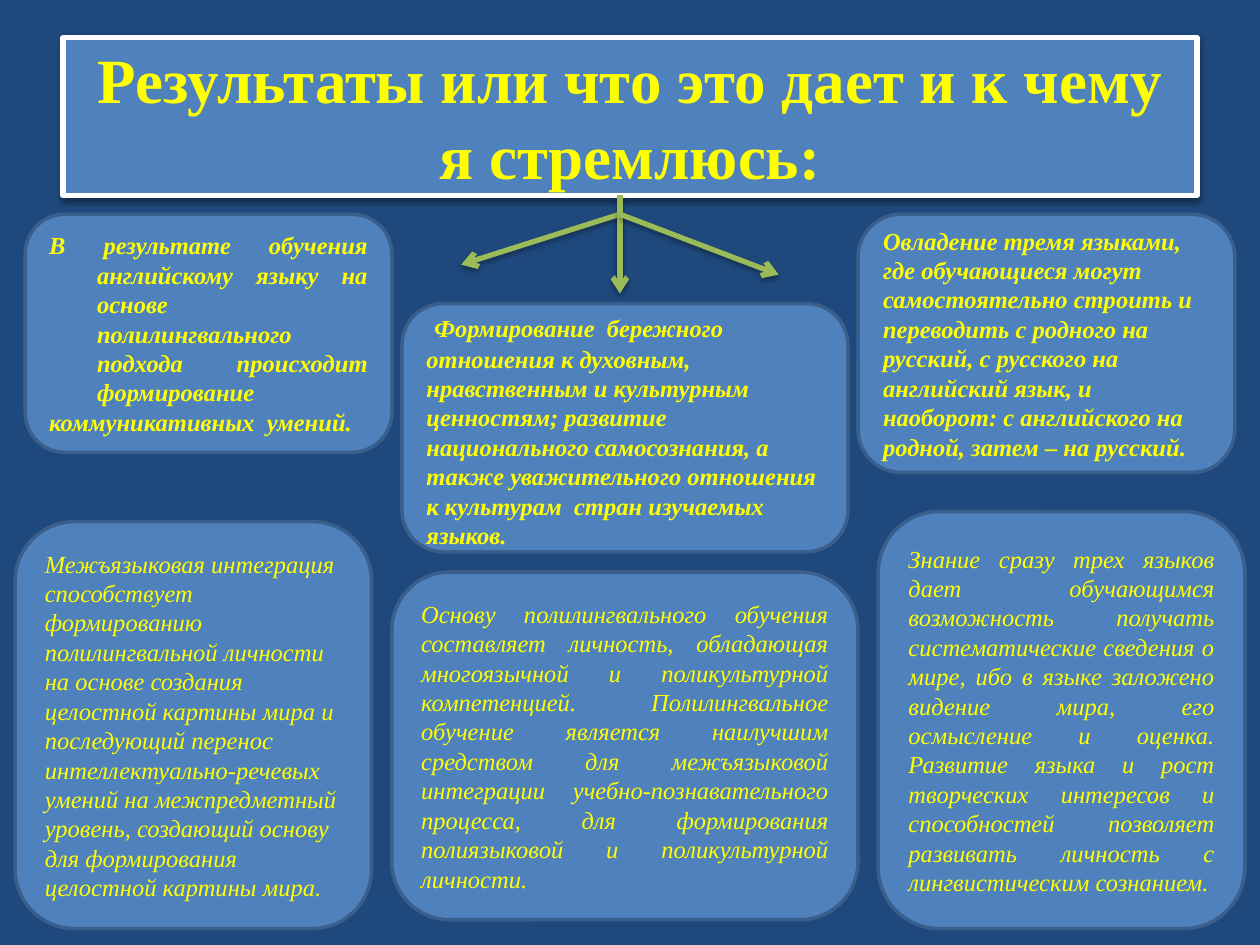
from lxml import etree
from pptx import Presentation
from pptx.dml.color import RGBColor
from pptx.enum.shapes import MSO_CONNECTOR, MSO_SHAPE
from pptx.enum.text import MSO_ANCHOR, PP_ALIGN
from pptx.oxml import parse_xml
from pptx.oxml.ns import nsdecls, qn
from pptx.util import Inches, Pt

NAVY = RGBColor(0x1F, 0x49, 0x7D)
BLUE = RGBColor(0x4F, 0x81, 0xBD)
BORDER = RGBColor(0x3A, 0x5F, 0x8C)
GREEN = RGBColor(0x9B, 0xBB, 0x59)
YELLOW = RGBColor(0xFF, 0xFF, 0x00)
WHITE = RGBColor(0xFF, 0xFF, 0xFF)

LEFT, JUSTIFY = PP_ALIGN.LEFT, PP_ALIGN.JUSTIFY

RESULTS = [
    ((0.2, 1.7, 2.91, 1.89), JUSTIFY, 0.38, [
        "В результате обучения английскому языку на основе полилингвального "
        "подхода происходит формирование",
        "коммуникативных  умений."]),
    ((3.19, 2.41, 3.54, 1.97), LEFT, 0, [
        "Формирование  бережного отношения к духовным, нравственным и "
        "культурным ценностям; развитие национального самосознания, а также "
        "уважительного отношения к культурам  стран изучаемых языков."]),
    ((6.81, 1.7, 2.99, 2.05), LEFT, 0, [
        "Овладение тремя языками, где обучающиеся могут самостоятельно "
        "строить и переводить с родного на русский, с русского на английский "
        "язык, и наоборот: с английского на родной, затем – на русский."]),
]
GOALS = [
    ((0.12, 4.14, 2.83, 3.23), LEFT, 0, [
        "Межъязыковая интеграция способствует формированию полилингвальной "
        "личности на основе создания целостной картины мира и последующий "
        "перенос интеллектуально-речевых умений на межпредметный уровень, "
        "создающий основу для формирования целостной картины мира."]),
    ((3.11, 4.54, 3.7, 2.76), JUSTIFY, 0, [
        "Основу полилингвального обучения составляет личность, обладающая "
        "многоязычной и поликультурной компетенцией. Полилингвальное обучение "
        "является наилучшим средством для межъязыковой интеграции "
        "учебно-познавательного процесса, для формирования полиязыковой и "
        "поликультурной личности."]),
    ((6.97, 4.06, 2.91, 3.31), JUSTIFY, 0, [
        "Знание сразу трех языков дает обучающимся возможность получать "
        "систематические сведения о мире, ибо в языке заложено видение мира, "
        "его осмысление и оценка. Развитие языка и рост творческих интересов и "
        "способностей позволяет развивать личность с лингвистическим "
        "сознанием."]),
]


def add_shadow(owner, opacity, distance):
    owner._element.spPr.append(parse_xml(
        f'<a:effectLst {nsdecls("a")}><a:outerShdw blurRad="{Pt(3.1)}" '
        f'dist="{Pt(distance)}" dir="5400000" rotWithShape="0">'
        f'<a:srgbClr val="000000"><a:alpha val="{opacity * 1000}"/></a:srgbClr>'
        f'</a:outerShdw></a:effectLst>'))


def add_panel(slide, box, kind, border, border_width):
    panel = slide.shapes.add_shape(kind, *map(Inches, box))
    panel.fill.solid()
    panel.fill.fore_color.rgb = BLUE
    panel.line.color.rgb = border
    panel.line.width = Pt(border_width)
    panel.text_frame.word_wrap = True
    panel.text_frame.vertical_anchor = MSO_ANCHOR.MIDDLE
    return panel


def style_paragraph(paragraph, size, alignment, bold, italic):
    paragraph.alignment = alignment
    font = paragraph.font
    font.name = "Times New Roman"
    font.size = Pt(size)
    font.bold = bold
    font.italic = italic
    font.color.rgb = YELLOW


def add_title(slide, box):
    title = add_panel(slide, box, MSO_SHAPE.RECTANGLE, WHITE, 3)
    add_shadow(title, 38, 1.6)
    title.text_frame.text = "Результаты или что это дает и к чему я стремлюсь:"
    style_paragraph(title.text_frame.paragraphs[0], 36, PP_ALIGN.CENTER, True, False)


def add_card(slide, box, alignment, hanging, texts, bold):
    card = add_panel(slide, box, MSO_SHAPE.ROUNDED_RECTANGLE, BORDER, 2)
    card.shadow.inherit = False
    card.text_frame.text = "\n".join(texts)
    for paragraph in card.text_frame.paragraphs:
        style_paragraph(paragraph, 14, alignment, bold, True)
        if hanging:
            properties = paragraph._p.get_or_add_pPr()
            properties.set("marL", str(Inches(hanging)))
            properties.set("indent", str(-Inches(hanging)))
    return card


def add_lead_space(card):
    paragraph = card.text_frame.paragraphs[0]
    lead = paragraph.add_run()
    lead.text = " "
    lead.font.size = Pt(18)
    paragraph.runs[0]._r.addprevious(lead._r)


def add_arrows(slide, box):
    left, top, width, height = box
    center, hub = left + width / 2, top + 0.15
    spokes = [
        (hub, center, top + 0.7, False),
        (hub, left, top + 0.55, True),
        (top, center, top + height, True),
        (hub, left + width, top + 0.63, True),
    ]
    for start, end_x, end_y, pointed in spokes:
        spoke = slide.shapes.add_connector(
            MSO_CONNECTOR.STRAIGHT, *map(Inches, (center, start, end_x, end_y)))
        spoke.line.color.rgb = GREEN
        spoke.line.width = Pt(3)
        if pointed:
            etree.SubElement(spoke.line._get_or_add_ln(), qn("a:tailEnd"), type="arrow")
        add_shadow(spoke, 35, 1.8)


def main():
    presentation = Presentation()
    presentation.slide_width = Inches(10)
    presentation.slide_height = Inches(7.5)
    slide = presentation.slides.add_slide(presentation.slide_layouts[6])
    slide.background.fill.solid()
    slide.background.fill.fore_color.rgb = NAVY

    add_title(slide, (0.5, 0.3, 9, 1.25))
    result_cards = [add_card(slide, *result, bold=True) for result in RESULTS]
    add_lead_space(result_cards[1])
    add_arrows(slide, (3.66, 1.55, 2.52, 0.78))
    for goal in GOALS:
        add_card(slide, *goal, bold=False)
    presentation.save("out.pptx")


if __name__ == "__main__":
    main()
